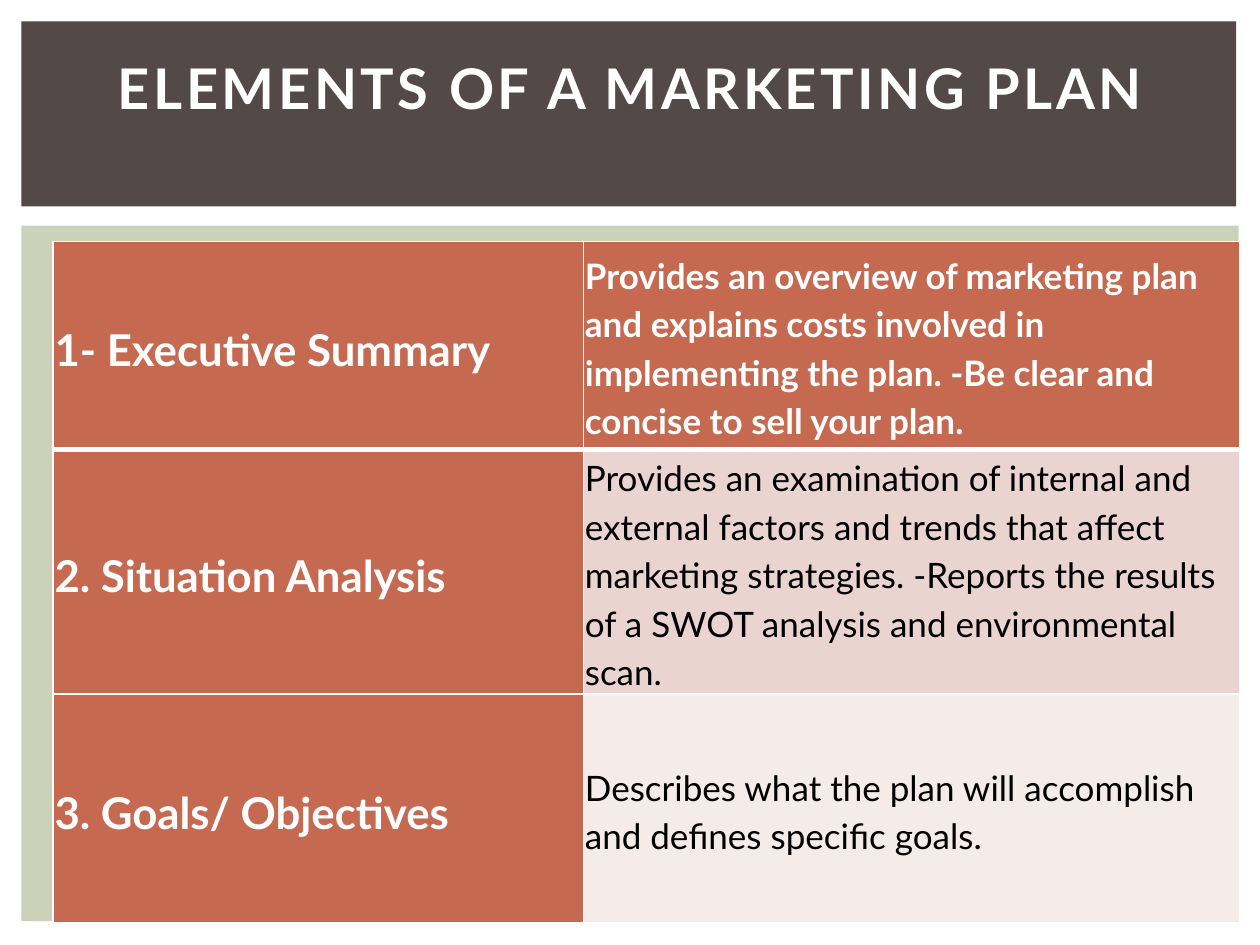
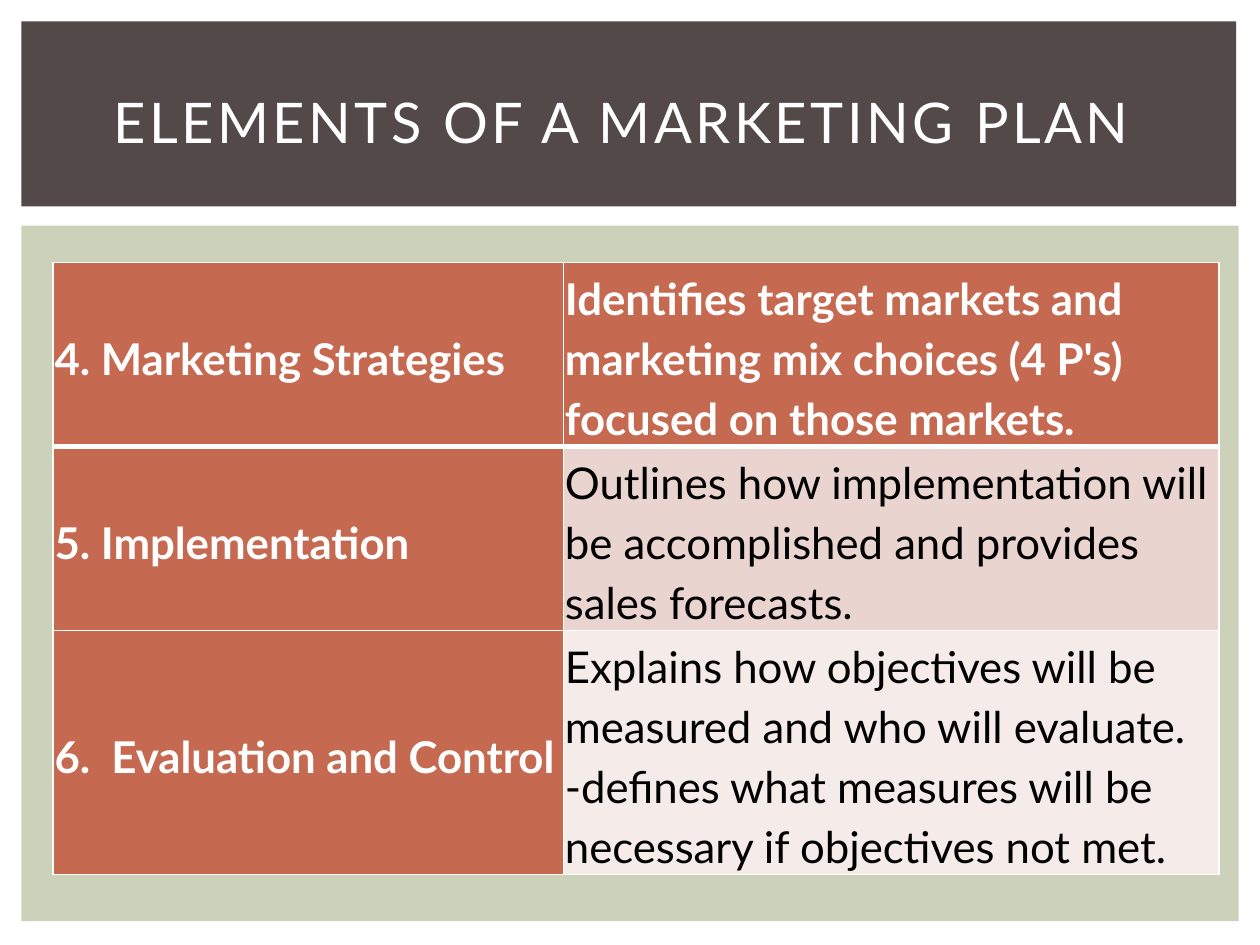
from pptx import Presentation
from pptx import util as u
from pptx.dml.color import RGBColor
from pptx.enum import shapes, text
from pptx.oxml.ns import qn
from lxml import etree

FONT = "Lato"
WHITE, BLACK = "FFFFFF", "000000"
BAND, PANEL = "534949", "CCD1B9"
ACCENT, TINT_DARK, TINT_LIGHT = "C66951", "EAD4D0", "F5EBE9"
DETAIL_FILLS = [ACCENT, TINT_DARK, TINT_LIGHT]
LEFT = 1.07
CELL_MARGIN = 0.03


def color(value):
    return RGBColor.from_string(value)


def apply(target, **values):
    for name, value in values.items():
        setattr(target, name, value)


def cm(*lengths):
    return [u.Cm(length) for length in lengths]


class Deck:
    def __init__(self):
        self.prs = Presentation()
        apply(self.prs, slide_width=u.Cm(25.4), slide_height=u.Cm(19.05))
        self.slide = None

    def new_slide(self):
        self.slide = self.prs.slides.add_slide(self.prs.slide_layouts[6])
        self.block(0.43, 4.55, 24.54, 14.02, PANEL)
        self.block(0.43, 0.43, 24.49, 3.73, BAND)

    def block(self, left, top, width, height, fill):
        block = self.slide.shapes.add_shape(
            shapes.MSO_SHAPE.RECTANGLE, *cm(left, top, width, height))
        block.shadow.inherit = False
        block.fill.solid()
        block.fill.fore_color.rgb = color(fill)
        block.line.fill.background()

    def styled_run(self, paragraph, wording, size, ink, bold):
        run = paragraph.add_run()
        run.text = wording
        apply(run.font, name=FONT, size=u.Pt(size), bold=bold)
        run.font.color.rgb = color(ink)
        return run

    def title(self, wording, bold, bottom_margin):
        """Centre the title in the band; a larger bottom margin lifts it."""
        box = self.slide.shapes.add_textbox(*cm(LEFT, 0.99, 23.29, 2.92))
        frame = box.text_frame
        apply(frame, word_wrap=True, margin_bottom=u.Cm(bottom_margin),
              vertical_anchor=text.MSO_ANCHOR.MIDDLE)
        paragraph = frame.paragraphs[0]
        paragraph.alignment = text.PP_ALIGN.CENTER
        run = self.styled_run(paragraph, wording, 32, WHITE, bold)
        run.font._element.set("spc", "200")

    def borders(self, cell, **widths):
        """Draw white cell borders; widths maps L, R, T, B to points."""
        properties = cell._tc.get_or_add_tcPr()
        for position, side in enumerate("LRTB"):
            line = etree.Element(qn(f"a:ln{side}"), w=str(u.Pt(widths.get(side, 1))))
            fill = etree.SubElement(line, qn("a:solidFill"))
            etree.SubElement(fill, qn("a:srgbClr"), val=WHITE)
            properties.insert(position, line)

    def cell(self, cell, wording, size, fill, row):
        on_accent = fill == ACCENT
        apply(cell, vertical_anchor=text.MSO_ANCHOR.MIDDLE,
              **{f"margin_{side}": u.Cm(CELL_MARGIN)
                 for side in ("left", "right", "top", "bottom")})
        cell.fill.solid()
        cell.fill.fore_color.rgb = color(fill)
        paragraph = cell.text_frame.paragraphs[0]
        paragraph.line_spacing = 1.15
        self.styled_run(paragraph, wording, size, WHITE if on_accent else BLACK, on_accent)
        self.borders(cell, **{0: {"B": 3}, 1: {"T": 3}}.get(row, {}))

    def elements_table(self, elements, top, widths, heights, detail_size):
        table = self.slide.shapes.add_table(
            len(elements), 2, *cm(LEFT, top, sum(widths), sum(heights))).table
        apply(table, first_row=False, horz_banding=False)
        for column, width in zip(table.columns, widths):
            column.width = u.Cm(width)
        for row, height in zip(table.rows, heights):
            row.height = u.Cm(height)
        for row, (element, detail) in enumerate(elements):
            self.cell(table.cell(row, 0), element, 25, ACCENT, row)
            self.cell(table.cell(row, 1), detail, detail_size, DETAIL_FILLS[row], row)


PLANNING = [
    ("1- Executive Summary",
     "Provides an overview of marketing plan and explains costs involved in "
     "implementing the plan. -Be clear and concise to sell your plan."),
    ("2. Situation Analysis",
     "Provides an examination of internal and external factors and trends that "
     "affect marketing strategies. -Reports the results of a SWOT analysis and "
     "environmental scan."),
    ("3. Goals/ Objectives",
     "Describes what the plan will accomplish and defines specific goals."),
]
EXECUTION = [
    ("4. Marketing Strategies",
     "Identifies target markets and marketing mix choices (4 P's) focused on "
     "those markets."),
    ("5. Implementation",
     "Outlines how implementation will be accomplished and provides sales "
     "forecasts."),
    ("6.  Evaluation and Control",
     "Explains how objectives will be measured and who will evaluate. -defines "
     "what measures will be necessary if objectives not met."),
]
TITLE = "ELEMENTS OF A MARKETING PLAN"


def main():
    deck = Deck()
    deck.new_slide()
    deck.title(TITLE, bold=True, bottom_margin=1.5)
    deck.elements_table(PLANNING, 4.87, [10.69, 13.23], [4.19, 4.62, 4.62], 20)

    deck.new_slide()
    deck.title(TITLE + " ", bold=False, bottom_margin=0.13)
    deck.elements_table(EXECUTION, 5.29, [10.29, 13.21], [3.53, 3.28, 4.7], 25)
    deck.prs.save("out.pptx")


if __name__ == "__main__":
    main()
